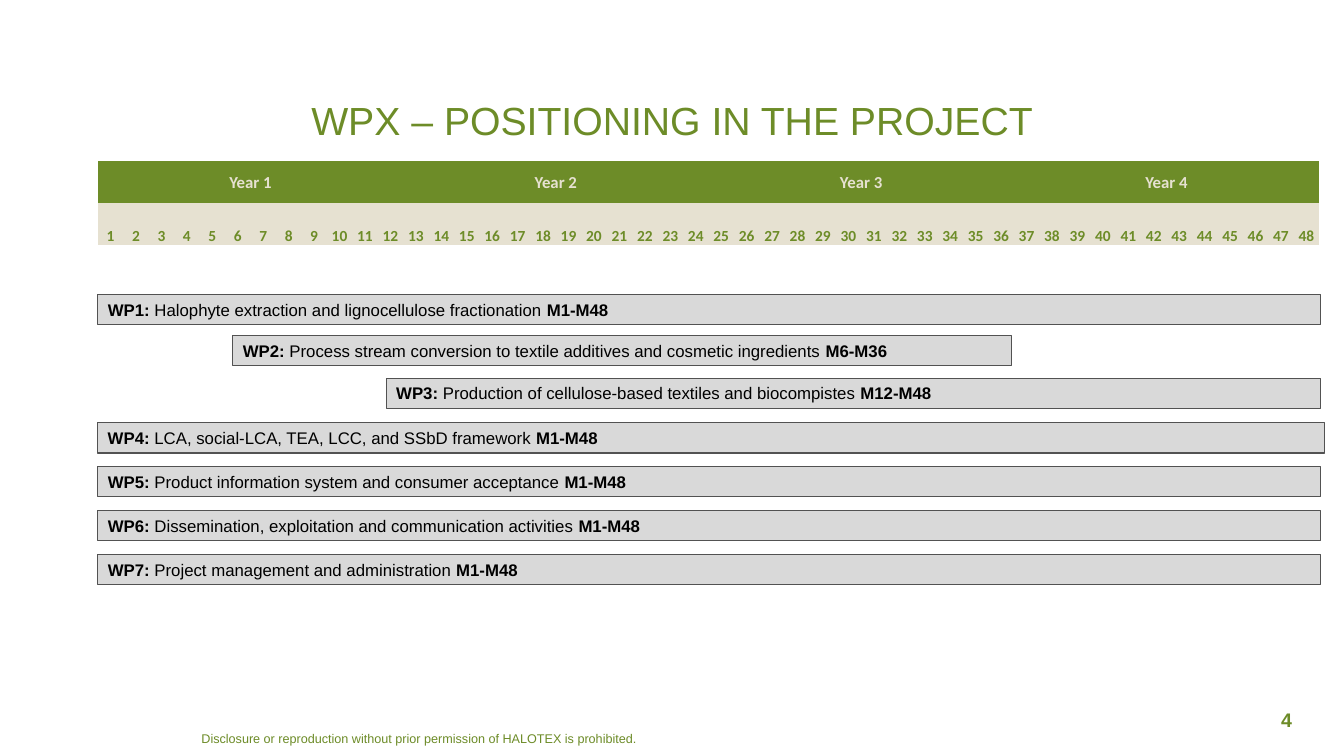
from dataclasses import dataclass

from lxml import etree
from pptx import Presentation
from pptx.dml.color import RGBColor
from pptx.enum.shapes import MSO_SHAPE
from pptx.enum.text import MSO_ANCHOR, MSO_AUTO_SIZE, PP_ALIGN
from pptx.oxml.ns import qn
from pptx.slide import Slide
from pptx.table import _Cell
from pptx.text.text import TextFrame
from pptx.util import Emu, Inches, Pt

RECT = MSO_SHAPE.RECTANGLE
TOP, MIDDLE, BOTTOM = MSO_ANCHOR.TOP, MSO_ANCHOR.MIDDLE, MSO_ANCHOR.BOTTOM
LEFT, CENTER = PP_ALIGN.LEFT, PP_ALIGN.CENTER
FIXED, GROW = MSO_AUTO_SIZE.NONE, MSO_AUTO_SIZE.SHAPE_TO_FIT_TEXT
NO_STYLE = "{2D5ABB26-0587-4C30-8999-92F81FD0307C}"
SLIDE_W, SLIDE_H = Inches(13.33), Inches(7.5)
YEARS, MONTHS = 4, 12


@dataclass(frozen=True)
class Theme:
    """Colours, fonts and type sizes."""
    green: str = "6D8C28"
    sand: str = "E6E1D1"
    bar: str = "D9D9D9"
    outline: str = "525252"
    ink: str = "000000"
    font: str = "Arial"
    table_font: str = "Calibri"
    title: float = 28
    page: float = 14
    body: float = 12
    month: float = 11
    footer: float = 9


@dataclass(frozen=True)
class WorkPackage:
    """One bar: its grid row, first and last month lines, and wording."""
    row: float
    start: float
    end: float
    label: str
    name: str
    period: str


THEME = Theme()
CHART_X, CHART_W = 7.28, 91
BARS_Y, BAR_PITCH, BAR_H = 38.53, 5.8, 4
HEADER_Y, HEADER_ROWS = 21.33, (5.47, 1.67, 4)
PACKAGES = (
    WorkPackage(0.07, 0, 48, "WP1:", "Halophyte extraction and lignocellulose fractionation", "M1-M48"),
    WorkPackage(1.01, 5.3, 35.85, "WP2:",
                "Process stream conversion to textile additives and cosmetic ingredients", "M6-M36"),
    WorkPackage(1.98, 11.32, 48, "WP3:", "Production of cellulose-based textiles and biocompistes", "M12-M48"),
    WorkPackage(3, 0, 48.16, "WP4:", "LCA, social-LCA, TEA, LCC, and SSbD framework", "M1-M48"),
    WorkPackage(4, 0, 48, "WP5:", "Product information system and consumer acceptance", "M1-M48"),
    WorkPackage(5, 0, 48, "WP6:", "Dissemination, exploitation and communication activities", "M1-M48"),
    WorkPackage(6, 0, 48, "WP7:", "Project management and administration", "M1-M48"),
)


def px(share: float) -> Emu:
    """Turn a percentage of the slide width into a length."""
    return Emu(round(SLIDE_W * share / 100))


def py(share: float) -> Emu:
    """Turn a percentage of the slide height into a length."""
    return Emu(round(SLIDE_H * share / 100))


def month_x(month: float) -> float:
    """Give the left share of a month line."""
    return CHART_X + CHART_W * month / (YEARS * MONTHS)


def write(tf: TextFrame, *runs: tuple[str, bool], size: float, color: str, font: str = THEME.font,
          align: PP_ALIGN = LEFT, spacing: float = 1.0) -> None:
    """Fill the first paragraph with (text, bold) runs in one format."""
    p = tf.paragraphs[0]
    p.alignment, p.line_spacing = align, spacing
    for text, bold in runs:
        r = p.add_run()
        r.text = text
        r.font.size, r.font.name, r.font.bold = Pt(size), font, bold
        r.font.color.rgb = RGBColor.from_string(color)


def add_title(s: Slide, text: str) -> None:
    """Place and format the slide title."""
    sp = s.shapes.title
    sp.left, sp.top, sp.width, sp.height = px(CHART_X), py(12.8), px(85.45), py(9.2)
    tf = sp.text_frame
    tf.auto_size, tf.vertical_anchor, tf.word_wrap = FIXED, TOP, True
    write(tf, (text, False), size=THEME.title, color=THEME.green, align=CENTER, spacing=0.9)


def add_label(s: Slide, x: float, y: float, w: float, text: str, *, size: float,
              bold: bool = False, align: PP_ALIGN = LEFT) -> None:
    """Add a green text box."""
    tf = s.shapes.add_textbox(px(x), py(y), px(w), py(5.33)).text_frame
    tf.word_wrap = True
    write(tf, (text, bold), size=size, color=THEME.green, align=align)


def format_cell(cell: _Cell, fill: str, anchor: MSO_ANCHOR) -> None:
    """Fill a cell and tighten its margins."""
    cell.fill.solid()
    cell.fill.fore_color.rgb = RGBColor.from_string(fill)
    cell.margin_left = cell.margin_right = cell.margin_top = Inches(0.01)
    cell.margin_bottom = 0
    cell.vertical_anchor = anchor


def add_calendar(s: Slide) -> None:
    """Draw the header table of years and months."""
    count = YEARS * MONTHS
    frame = s.shapes.add_table(len(HEADER_ROWS), count, px(CHART_X), py(HEADER_Y),
                               px(CHART_W), py(sum(HEADER_ROWS)))
    table = frame.table
    table.first_row = table.horz_banding = False
    table._tbl.tblPr.find(qn("a:tableStyleId")).text = NO_STYLE
    for row, share in zip(table.rows, HEADER_ROWS):
        row.height = py(share)
    for m in range(count):
        table.columns[m].width = px(CHART_W / count)
        year, gap, month = (table.cell(row, m) for row in range(len(HEADER_ROWS)))
        format_cell(year, THEME.green, MIDDLE)
        format_cell(gap, THEME.sand, MIDDLE)
        format_cell(month, THEME.sand, BOTTOM)
        etree.SubElement(gap.text_frame.paragraphs[0]._p, qn("a:endParaRPr"), sz="600")
        write(month.text_frame, (str(m + 1), True), size=THEME.month, color=THEME.green,
              font=THEME.table_font, align=CENTER)
    for y in range(YEARS):
        cell = table.cell(0, y * MONTHS)
        cell.merge(table.cell(0, (y + 1) * MONTHS - 1))
        write(cell.text_frame, (f"Year {y + 1}", True), size=THEME.body, color=THEME.sand,
              font=THEME.table_font, align=CENTER)


def add_bar(s: Slide, wp: WorkPackage) -> None:
    """Draw the bar of a work package."""
    x = month_x(wp.start)
    sp = s.shapes.add_shape(RECT, px(x), py(BARS_Y + BAR_PITCH * wp.row),
                            px(month_x(wp.end) - x), py(BAR_H))
    sp.shadow.inherit = False
    sp.fill.solid()
    sp.fill.fore_color.rgb = RGBColor.from_string(THEME.bar)
    sp.line.color.rgb = RGBColor.from_string(THEME.outline)
    sp.line.width = Pt(0.75)
    tf = sp.text_frame
    tf.word_wrap, tf.auto_size, tf.vertical_anchor = True, GROW, MIDDLE
    write(tf, (f"{wp.label} ", True), (f"{wp.name} ", False), (wp.period, True),
          size=THEME.body, color=THEME.ink)


def main() -> None:
    """Build and save the slide."""
    prs = Presentation()
    prs.slide_width, prs.slide_height = SLIDE_W, SLIDE_H
    s = prs.slides.add_slide(prs.slide_layouts.get_by_name("Title Only"))
    add_title(s, "WPX – POSITIONING IN THE PROJECT")
    add_calendar(s)
    for wp in PACKAGES:
        add_bar(s, wp)
    add_label(s, 14.25, 96, 38.78, "Disclosure or reproduction without prior permission of HALOTEX is prohibited.",
              size=THEME.footer)
    add_label(s, 92.87, 92.93, 5.7, "4", size=THEME.page, bold=True, align=CENTER)
    prs.save("out.pptx")


if __name__ == "__main__":
    main()
